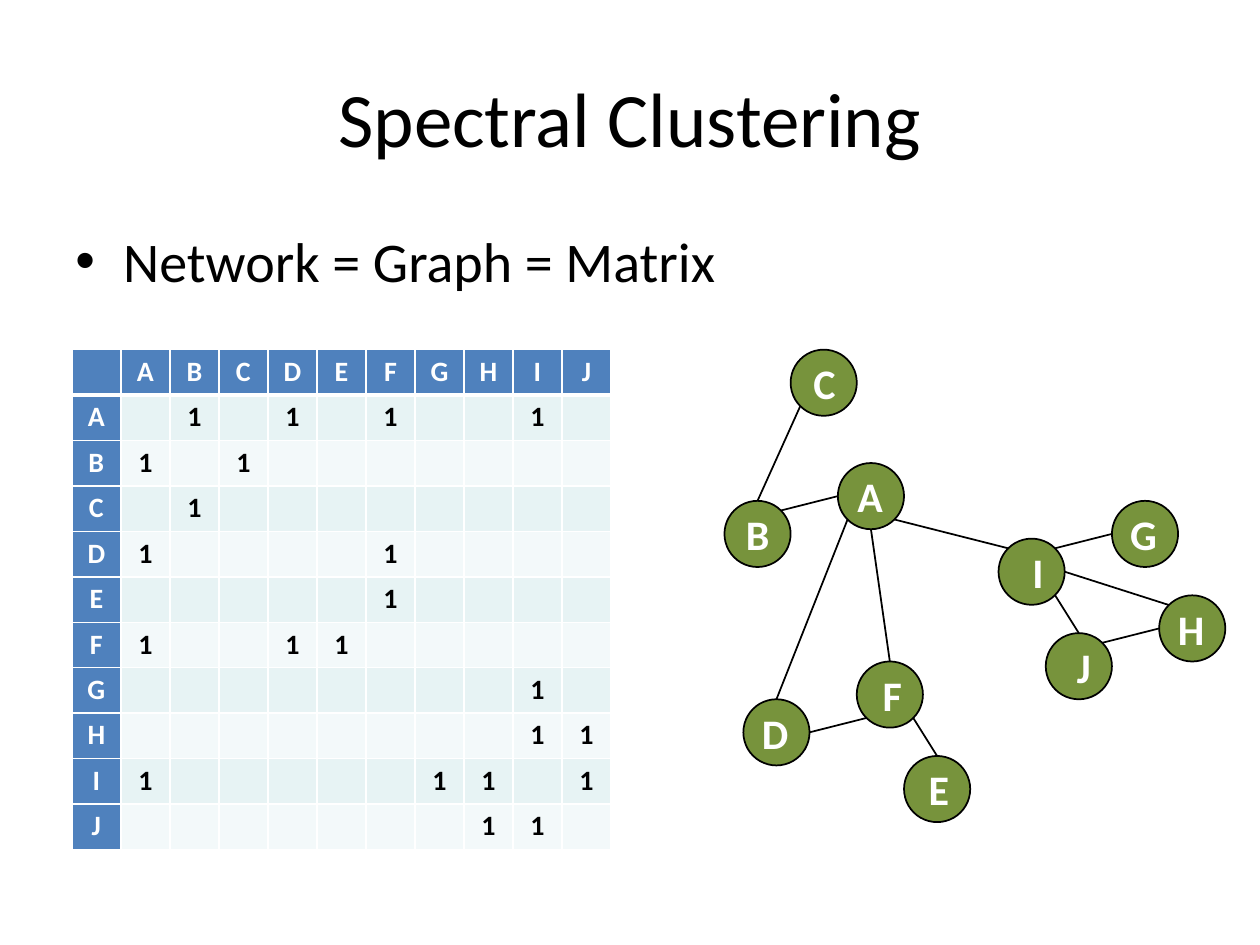
"""Build a slide that shows one network as a graph and as its matrix."""
from lxml.etree import SubElement
from pptx import Presentation
from pptx.dml.color import RGBColor
from pptx.enum.shapes import MSO_CONNECTOR, MSO_SHAPE
from pptx.enum.text import MSO_ANCHOR, PP_ALIGN
from pptx.oxml.ns import qn
from pptx.util import Inches, Pt

BLACK = RGBColor(0, 0, 0)
WHITE = RGBColor(255, 255, 255)
GREEN = RGBColor(0x77, 0x93, 0x3C)
BLUE = RGBColor(0x4F, 0x81, 0xBD)
BANDS = RGBColor(0xF3, 0xF9, 0xFA), RGBColor(0xE7, 0xF3, 0xF4)

TITLE = "Spectral Clustering"
POINT = "Network = Graph = Matrix"
NODES = {
    "A": (12, 12), "B": (0, 16), "C": (7, 0), "F": (14, 33), "D": (2, 37),
    "E": (19, 43), "G": (41, 16), "I": (29, 20), "H": (46, 26), "J": (34, 30),
}
EDGES = [
    ("B", "top", "C", "low left"), ("A", "left", "B", "high right"),
    ("A", "low right", "I", "high left"), ("I", "right", "H", "high left"),
    ("G", "left", "I", "high right"), ("J", "top", "I", "low right"),
    ("D", "right", "F", "low left"), ("F", "low right", "E", "top"),
    ("A", "bottom", "F", "top"), ("J", "high right", "H", "left"),
    ("A", "low left", "D", "top"),
]
DIAG = 0.5 ** 0.5
SITES = {
    "top": (0, -1), "bottom": (0, 1), "left": (-1, 0), "right": (1, 0),
    "high left": (-DIAG, -DIAG), "high right": (DIAG, -DIAG),
    "low left": (-DIAG, DIAG), "low right": (DIAG, DIAG),
}
UNIT = Inches(3) // 40
SIZE = 7 * UNIT
LEFT, TOP = Inches(5.75), 37 * UNIT


def write(frame, text, size=16, color=BLACK, bold=False, align=PP_ALIGN.CENTER):
    para = frame.paragraphs[0]
    para.alignment = align
    if not text:
        SubElement(para._p, qn("a:endParaRPr"), sz=str(size * 100))
        return para
    run = para.add_run()
    run.text = text
    font = run.font
    font.name, font.size, font.bold = "Calibri", Pt(size), bold
    font.color.rgb = color
    return para


def add_box(slide, top, high):
    frame = slide.shapes.add_textbox(
        Inches(0.5), Inches(top), Inches(9), Inches(high)).text_frame
    frame.word_wrap = True
    return frame


def add_heads(slide):
    frame = add_box(slide, 0.3, 1.25)
    frame.vertical_anchor = MSO_ANCHOR.MIDDLE
    write(frame, TITLE, size=44)
    para = write(add_box(slide, 1.75, 0.67), POINT, size=32, align=PP_ALIGN.LEFT)
    props = para._p.get_or_add_pPr()
    props.set("marL", str(Inches(0.38)))
    props.set("indent", str(-Inches(0.38)))
    space = SubElement(props, qn("a:spcBef"))
    SubElement(space, qn("a:spcPct"), val="20000")
    SubElement(props, qn("a:buFont"), typeface="Arial")
    SubElement(props, qn("a:buChar"), char="•")


def add_node(slide, name, col, row):
    node = slide.shapes.add_shape(
        MSO_SHAPE.OVAL, LEFT + col * UNIT, TOP + row * UNIT, SIZE, SIZE)
    node.shadow.inherit = False
    node.fill.solid()
    node.fill.fore_color.rgb = GREEN
    node.line.color.rgb = BLACK
    node.line.width = Pt(1)
    frame = node.text_frame
    frame.word_wrap = False
    frame.vertical_anchor = MSO_ANCHOR.MIDDLE
    frame.margin_left = frame.margin_right = Inches(0.09)
    frame.margin_top = frame.margin_bottom = Inches(0.04)
    write(frame, name, size=24, color=WHITE, bold=True, align=PP_ALIGN.RIGHT)


def find_site(name, site):
    (col, row), (across, down) = NODES[name], SITES[site]
    return (round(LEFT + col * UNIT + SIZE * (1 + across) / 2),
            round(TOP + row * UNIT + SIZE * (1 + down) / 2))


def add_edge(slide, start, out, end, into):
    edge = slide.shapes.add_connector(
        MSO_CONNECTOR.STRAIGHT, *find_site(start, out), *find_site(end, into))
    edge.line.color.rgb = BLACK
    edge.line.width = Pt(1)
    SubElement(edge._element.spPr, qn("a:effectLst"))


def set_sides(cell, widths):
    props = cell._tc.get_or_add_tcPr()
    for spot, (side, width) in enumerate(widths.items()):
        line = props.makeelement(qn("a:ln" + side), {"w": str(Pt(width))})
        fill = SubElement(line, qn("a:solidFill"))
        SubElement(fill, qn("a:srgbClr"), val=str(WHITE))
        props.insert(spot, line)


def add_matrix(slide):
    names = sorted(NODES)
    count = len(names) + 1
    links = {frozenset((start, end)) for start, _, end, _ in EDGES}
    table = slide.shapes.add_table(
        count, count, Inches(0.57), TOP, Inches(4.28), Inches(3.97)).table
    for row, down in enumerate([""] + names):
        table.rows[row].height = Inches(3.97) // count
        table.columns[row].width = Inches(4.28) // count
        for col, across in enumerate([""] + names):
            cell = table.cell(row, col)
            head = row == 0 or col == 0
            linked = frozenset((down, across)) in links
            text = down + across if head else "1" if linked else ""
            cell.margin_left = cell.margin_right = Inches(0.09)
            cell.margin_top = cell.margin_bottom = Inches(0.04)
            cell.fill.solid()
            cell.fill.fore_color.rgb = BLUE if head else BANDS[row % 2]
            write(cell.text_frame, text, color=WHITE if head else BLACK, bold=True)
            set_sides(cell, {"L": 1, "R": 1, "T": 3 if row == 1 else 1,
                             "B": 3 if row == 0 else 1})


def main():
    deck = Presentation()
    deck.slide_width, deck.slide_height = Inches(10), Inches(7.5)
    slide = deck.slides.add_slide(deck.slide_layouts[6])
    add_heads(slide)
    for name, (col, row) in NODES.items():
        add_node(slide, name, col, row)
    for edge in EDGES:
        add_edge(slide, *edge)
    add_matrix(slide)
    deck.save("out.pptx")


if __name__ == "__main__":
    main()
